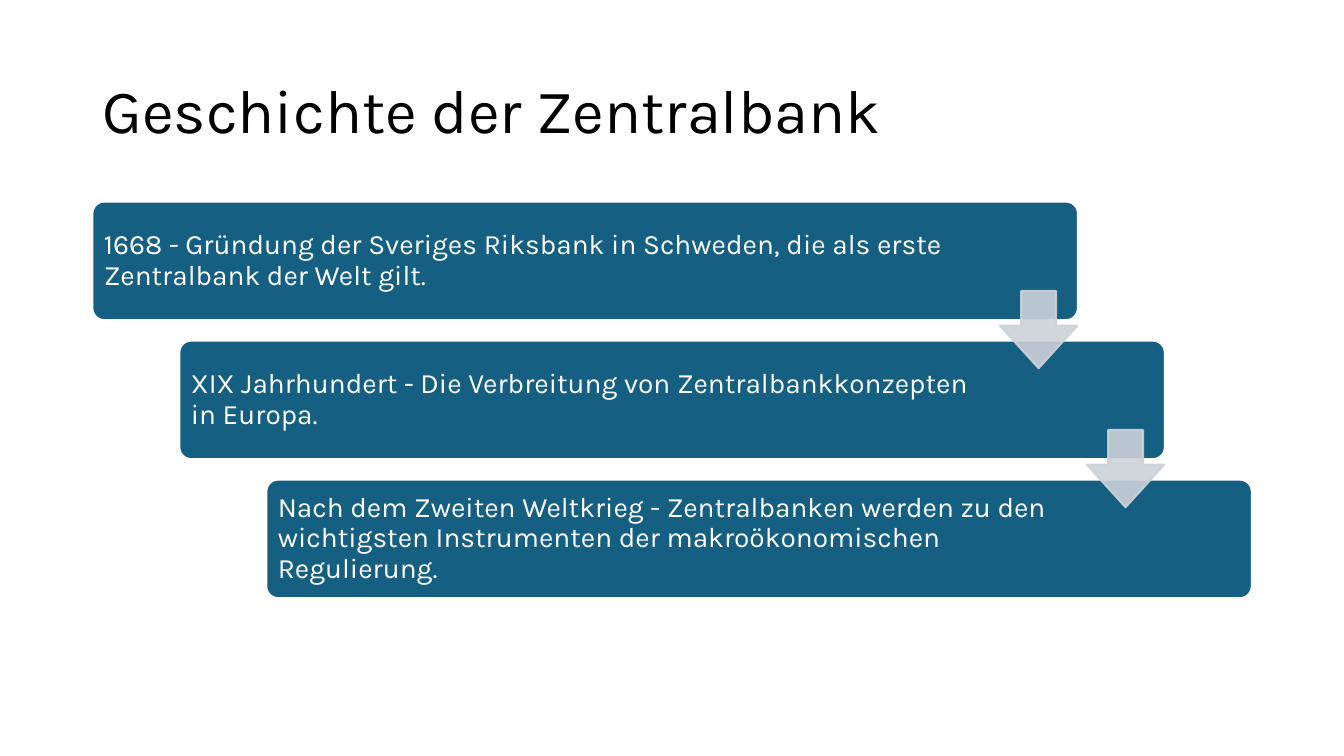
from dataclasses import dataclass

from lxml.etree import SubElement
from pptx import Presentation
from pptx.dml.color import RGBColor
from pptx.enum.shapes import MSO_SHAPE as Preset
from pptx.enum.text import MSO_ANCHOR as Anchor, PP_ALIGN as Align
from pptx.oxml.ns import qn
from pptx.util import Pt

TITLE = "Geschichte der Zentralbank"
MILESTONES = [
    ("1668 - Gründung der Sveriges Riksbank in Schweden, "
     "die als erste Zentralbank der Welt gilt.", 93.5),
    ("XIX Jahrhundert - Die Verbreitung von Zentralbankkonzepten in Europa.", 124),
    ("Nach dem Zweiten Weltkrieg - Zentralbanken werden zu den wichtigsten "
     "Instrumenten der makroökonomischen Regulierung.", 124),
]


@dataclass(frozen=True)
class Theme:
    font: str = "Karla"
    title_size: float = 44
    body_size: float = 20
    ink: str = "000000"
    white: str = "FFFFFF"
    box: str = "156082"
    arrow: str = "CCD2D8"
    arrow_alpha: int = 90


THEME = Theme()
SLIDE_WIDTH, SLIDE_HEIGHT = 960, 540
TITLE_AREA = (66, 28.75, 828, 104.4)
BOX_LEFT, BOX_TOP, BOX_WIDTH, BOX_HEIGHT = 66, 144, 704, 84.7
STEP_X, STEP_Y = 62.1, 99.3
ARROW_SIZE = 55.2
ARROW_OFFSET_X, ARROW_OFFSET_Y = 648.3, 63.8
LINE_WIDTH = 1.5
INSET = 5.76


def write_text(shape, text, *, size, color, insets):
    frame = shape.text_frame
    frame.word_wrap = True
    frame.vertical_anchor = Anchor.MIDDLE
    frame.margin_left, frame.margin_top, frame.margin_right, frame.margin_bottom = map(Pt, insets)
    paragraph = frame.paragraphs[0]
    paragraph.alignment = Align.LEFT
    paragraph.line_spacing = 0.9
    run = paragraph.add_run()
    run.text = text
    run.font.name = THEME.font
    run.font.size = Pt(size)
    run.font.color.rgb = RGBColor.from_string(color)


def add_preset(slide, preset, area, adjustments, fill, line, alpha=100):
    shape = slide.shapes.add_shape(preset, *map(Pt, area))
    shape.shadow.inherit = False
    for index, value in enumerate(adjustments):
        shape.adjustments[index] = value
    shape.fill.solid()
    shape.fill.fore_color.rgb = RGBColor.from_string(fill)
    shape.line.color.rgb = RGBColor.from_string(line)
    shape.line.width = Pt(LINE_WIDTH)
    if alpha < 100:
        for color in shape.element.spPr.iter(qn("a:srgbClr")):
            SubElement(color, qn("a:alpha")).set("val", str(alpha * 1000))
    return shape


def main():
    presentation = Presentation()
    presentation.slide_width, presentation.slide_height = Pt(SLIDE_WIDTH), Pt(SLIDE_HEIGHT)
    slide = presentation.slides.add_slide(presentation.slide_layouts[5])

    title = slide.shapes.title
    title.left, title.top, title.width, title.height = map(Pt, TITLE_AREA)
    write_text(title, TITLE, size=THEME.title_size, color=THEME.ink, insets=(7.2, 3.6, 7.2, 3.6))

    corners = [(BOX_LEFT + i * STEP_X, BOX_TOP + i * STEP_Y) for i in range(len(MILESTONES))]
    for (left, top), (text, right_inset) in zip(corners, MILESTONES):
        box = add_preset(slide, Preset.ROUNDED_RECTANGLE, (left, top, BOX_WIDTH, BOX_HEIGHT),
                         [0.1], THEME.box, THEME.white)
        write_text(box, text, size=THEME.body_size, color=THEME.white,
                   insets=(INSET, INSET, right_inset, INSET))

    for left, top in corners[:-1]:
        area = (left + ARROW_OFFSET_X, top + ARROW_OFFSET_Y, ARROW_SIZE, ARROW_SIZE)
        add_preset(slide, Preset.DOWN_ARROW, area, [0.45, 0.55],
                   THEME.arrow, THEME.arrow, THEME.arrow_alpha)

    presentation.save("out.pptx")


if __name__ == "__main__":
    main()
